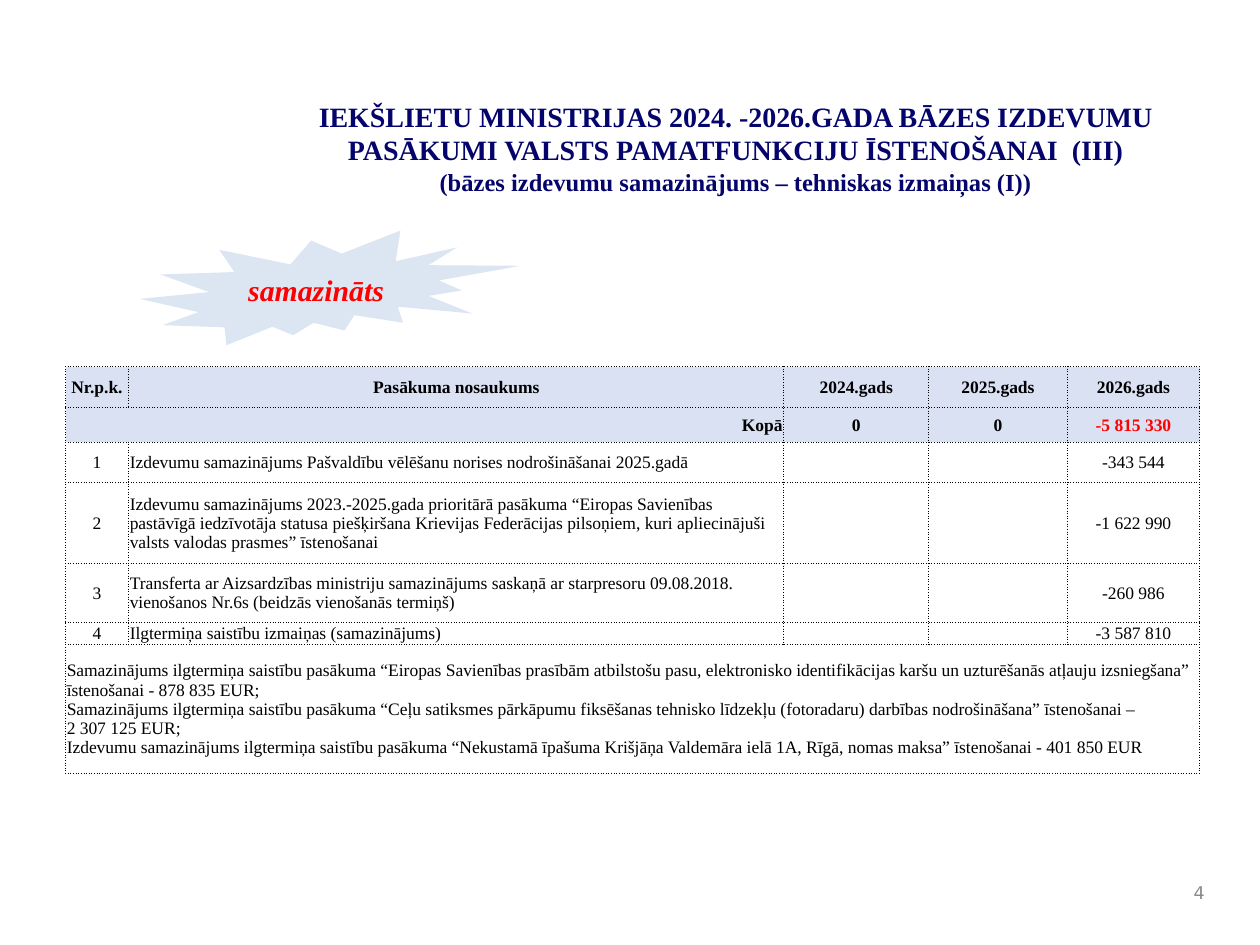
from lxml import etree
from pptx import Presentation
from pptx.dml.color import RGBColor
from pptx.enum.shapes import MSO_SHAPE
from pptx.enum.text import MSO_ANCHOR, PP_ALIGN
from pptx.oxml.ns import qn
from pptx.util import Inches, Pt

LEFT, CENTER, RIGHT = PP_ALIGN.LEFT, PP_ALIGN.CENTER, PP_ALIGN.RIGHT
TOP, MIDDLE = MSO_ANCHOR.TOP, MSO_ANCHOR.MIDDLE
BURST = MSO_SHAPE.EXPLOSION2

COLORS = {
    "title": "04046C",
    "text": "000000",
    "alert": "FF0000",
    "number": "898989",
    "header": "D9E1F2",
    "burst": "DCE6F2",
}
SERIF = "Times New Roman"
SANS = "DejaVu Sans"

COLUMN_WIDTHS = [0.5, 5.2, 1.15, 1.1, 1.05]
ROW_HEIGHTS = [0.32, 0.28, 0.32, 0.64, 0.47, 0.17, 1.02]
HEADINGS = ["Nr.p.k.", "Pasākuma nosaukums", "2024.gads", "2025.gads", "2026.gads"]
TOTALS = ["Kopā", "", "0", "0", "-5 815 330"]
MEASURES = [
    ("Izdevumu samazinājums Pašvaldību vēlēšanu norises nodrošināšanai 2025.gadā", "-343 544"),
    ("Izdevumu samazinājums 2023.-2025.gada prioritārā pasākuma “Eiropas Savienības pastāvīgā "
     "iedzīvotāja statusa piešķiršana Krievijas Federācijas pilsoņiem, kuri apliecinājuši valsts "
     "valodas prasmes” īstenošanai", "-1 622 990"),
    ("Transferta ar Aizsardzības ministriju samazinājums saskaņā ar starpresoru 09.08.2018. "
     "vienošanos Nr.6s (beidzās vienošanās termiņš)", "-260 986"),
    ("Ilgtermiņa saistību izmaiņas (samazinājums)", "-3 587 810"),
]
DETAILS = [
    "Samazinājums ilgtermiņa saistību pasākuma “Eiropas Savienības prasībām atbilstošu pasu, "
    "elektronisko identifikācijas karšu un uzturēšanās atļauju izsniegšana” īstenošanai - 878 835 EUR;\n"
    "Samazinājums ilgtermiņa saistību pasākuma “Ceļu satiksmes pārkāpumu fiksēšanas tehnisko "
    "līdzekļu (fotoradaru) darbības nodrošināšana” īstenošanai –",
    "2 307 125 EUR;\n"
    "Izdevumu samazinājums ilgtermiņa saistību pasākuma “Nekustamā īpašuma Krišjāņa Valdemāra "
    "ielā 1A, Rīgā, nomas maksa” īstenošanai - 401 850 EUR",
]


def rgb(name):
    return RGBColor.from_string(COLORS[name])


class SlideBuilder:
    def __init__(self, slide):
        self.slide = slide

    def add_lines(self, frame, lines, align, color, font=SERIF, bold=False, italic=False):
        for index, (text, size) in enumerate(lines):
            paragraph = frame.paragraphs[0] if index == 0 else frame.add_paragraph()
            paragraph.alignment = align
            for part_index, part in enumerate(text.split("\n")):
                if part_index:
                    paragraph.add_line_break()
                run = paragraph.add_run()
                run.text = part
                run.font.name = font
                run.font.size = Pt(size)
                run.font.bold = bold
                run.font.italic = italic
                run.font.color.rgb = rgb(color)

    def text(self, box, lines, align, color, anchor=TOP, **style):
        frame = self.slide.shapes.add_textbox(*map(Inches, box)).text_frame
        frame.word_wrap = True
        frame.vertical_anchor = anchor
        self.add_lines(frame, lines, align, color, **style)

    def burst(self, box, label):
        burst = self.slide.shapes.add_shape(BURST, *map(Inches, box))
        burst.shadow.inherit = False
        burst.fill.solid()
        burst.fill.fore_color.rgb = rgb("burst")
        burst.line.fill.background()
        burst.text_frame.vertical_anchor = MIDDLE
        self.add_lines(burst.text_frame, [(label, 17)], CENTER, "alert", bold=True, italic=True)

    def table(self, left, top, widths, heights):
        table = self.slide.shapes.add_table(
            len(heights), len(widths), Inches(left), Inches(top),
            Inches(sum(widths)), Inches(sum(heights))).table
        table.first_row = False
        table.horz_banding = False
        for column, width in zip(table.columns, widths):
            column.width = Inches(width)
        for row, height in zip(table.rows, heights):
            row.height = Inches(height)
        for cell in table.iter_cells():
            self.style_cell(cell)
        return table

    def style_cell(self, cell):
        cell.vertical_anchor = MIDDLE
        cell.margin_left = cell.margin_right = cell.margin_top = Inches(0.01)
        cell.margin_bottom = 0
        properties = cell._tc.get_or_add_tcPr()
        for side in ("lnL", "lnR", "lnT", "lnB"):
            border = etree.SubElement(properties, qn(f"a:{side}"), w=str(Pt(0.5)))
            fill = etree.SubElement(border, qn("a:solidFill"))
            etree.SubElement(fill, qn("a:srgbClr"), val=COLORS["text"])
            etree.SubElement(border, qn("a:prstDash"), val="sysDot")
        cell.fill.background()
        etree.SubElement(cell.text_frame.paragraphs[0]._p, qn("a:endParaRPr"), sz="1000")

    def fill_cell(self, cell, paragraphs, align=CENTER, color="text", header=False):
        if header:
            cell.fill.solid()
            cell.fill.fore_color.rgb = rgb("header")
        lines = [(text, 10) for text in paragraphs if text]
        self.add_lines(cell.text_frame, lines, align, color, bold=header)


def main():
    deck = Presentation()
    deck.slide_width, deck.slide_height = Inches(10), Inches(7.5)
    builder = SlideBuilder(deck.slides.add_slide(deck.slide_layouts[6]))

    title = [
        ("IEKŠLIETU MINISTRIJAS 2024. -2026.GADA BĀZES IZDEVUMU PASĀKUMI VALSTS "
         "PAMATFUNKCIJU ĪSTENOŠANAI  (III)", 16),
        ("(bāzes izdevumu samazinājums – tehniskas izmaiņas (I))", 14),
    ]
    builder.text((1.87, 0.74, 7.94, 0.93), title, CENTER, "title", bold=True)
    builder.text((9.33, 6.92, 0.33, 0.33), [("4", 10)], RIGHT, "number", MIDDLE, font=SANS)

    expenses = builder.table(0.52, 2.91, COLUMN_WIDTHS, ROW_HEIGHTS)
    last_row, last_column = len(ROW_HEIGHTS) - 1, len(COLUMN_WIDTHS) - 1
    expenses.cell(1, 0).merge(expenses.cell(1, 1))
    expenses.cell(last_row, 0).merge(expenses.cell(last_row, last_column))

    for column, (heading, total) in enumerate(zip(HEADINGS, TOTALS)):
        builder.fill_cell(expenses.cell(0, column), [heading], header=True)
        builder.fill_cell(expenses.cell(1, column), [total],
                          RIGHT if column == 0 else CENTER,
                          "alert" if column == last_column else "text", header=True)
    for number, (measure, amount) in enumerate(MEASURES, start=1):
        row = number + 1
        builder.fill_cell(expenses.cell(row, 0), [str(number)])
        builder.fill_cell(expenses.cell(row, 1), [measure], LEFT)
        builder.fill_cell(expenses.cell(row, last_column), [amount])
    builder.fill_cell(expenses.cell(last_row, 0), DETAILS, LEFT)

    builder.burst((1.11, 1.83, 3.02, 0.91), "samazināts")
    deck.save("out.pptx")


if __name__ == "__main__":
    main()
